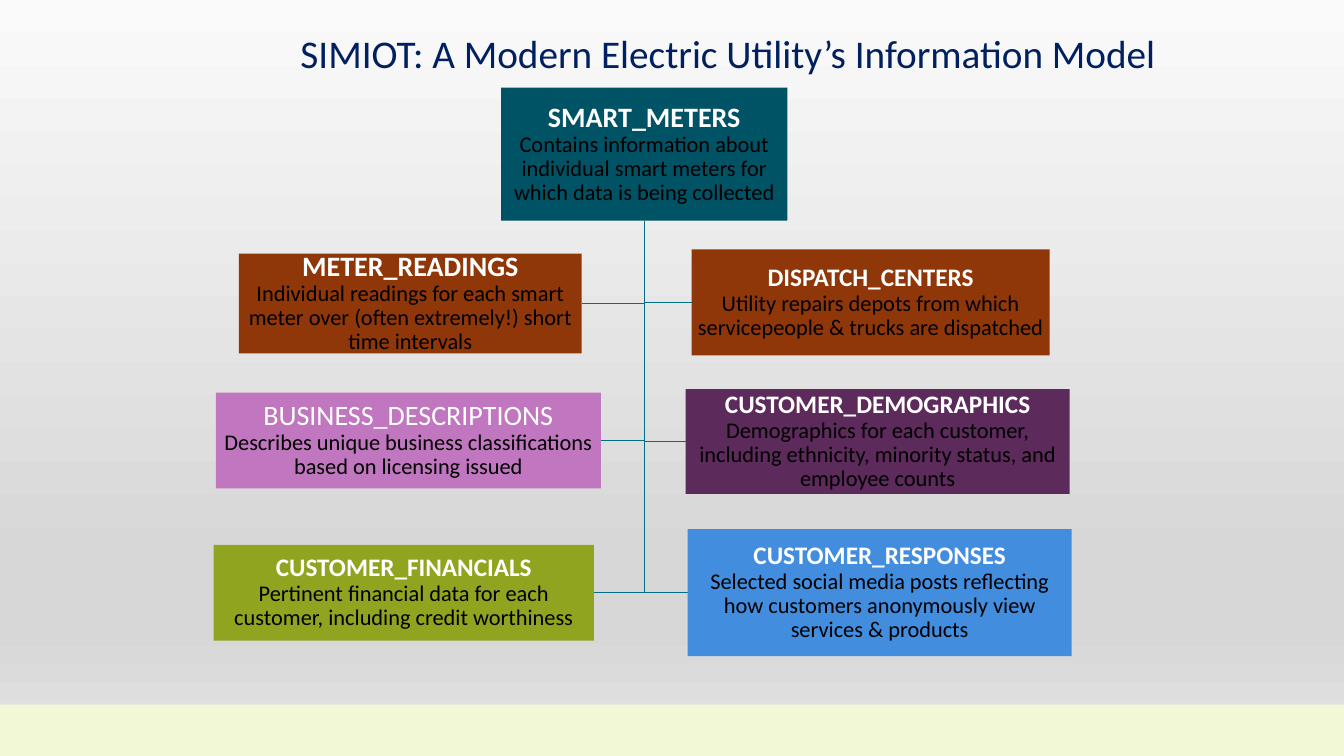
"""Build the SIMIOT information model slide: one parent table with six child tables."""
from lxml.etree import SubElement
from pptx import Presentation
from pptx.dml.color import RGBColor
from pptx.enum.shapes import MSO_SHAPE as Shape
from pptx.enum.text import MSO_ANCHOR as Anchor, MSO_AUTO_SIZE as AutoSize, PP_ALIGN as Align
from pptx.oxml.ns import qn
from pptx.util import Inches, Pt

WIDTH, HEIGHT = 13.33, 7.5
FONT = "Calibri"
COLORS = {
    "title": "002060", "band": "F2F7D6", "line": "006E86", "name": "FFFFFF", "detail": "000000",
    "teal": "005265", "rust": "903709", "orchid": "C177BF", "plum": "5C2A5B",
    "olive": "90A420", "blue": "438DDF",
}
BACKGROUND_STOPS = [(0, "FAFAFA"), (74, "D7D7D7"), (83, "D7D7D7"), (100, "E4E4E4")]

TITLE = "SIMIOT: A Modern Electric Utility’s Information Model"
TITLE_BOX = (2.91, 0.19, 10.34, 0.73)
BAND_TOP = 6.99
TRUNK_X = 6.39
PARENT_TOP = 0.87

PARENT = dict(name="SMART_METERS", size=20, bold=True, color="teal", width=2.84, height=1.32,
              detail="Contains information about individual smart meters for which data is being collected")
LEFT_CHILDREN = [
    dict(name="METER_READINGS", size=20, bold=True, color="rust",
         center=3.01, gap=0.62, width=3.4, height=0.99,
         detail="Individual readings for each smart meter over (often extremely!) short time intervals"),
    dict(name="BUSINESS_DESCRIPTIONS", size=20, bold=False, color="orchid",
         center=4.37, gap=0.43, width=3.82, height=0.95,
         detail="Describes unique business classifications based on licensing issued"),
    dict(name="CUSTOMER_FINANCIALS", size=18, bold=True, color="olive",
         center=5.88, gap=0.5, width=3.77, height=0.95,
         detail="Pertinent financial data for each customer, including credit worthiness"),
]
RIGHT_CHILDREN = [
    dict(name="DISPATCH_CENTERS", size=18, bold=True, color="rust",
         center=3.0, gap=0.47, width=3.55, height=1.05,
         detail="Utility repairs depots from which servicepeople & trucks are dispatched"),
    dict(name="CUSTOMER_DEMOGRAPHICS", size=18, bold=True, color="plum",
         center=4.38, gap=0.41, width=3.81, height=1.04,
         detail="Demographics for each customer, including ethnicity, minority status, and employee counts"),
    dict(name="CUSTOMER_RESPONSES", size=18, bold=True, color="blue",
         center=5.88, gap=0.43, width=3.81, height=1.26,
         detail="Selected social media posts reflecting how customers anonymously view services & products"),
]


def rgb(key):
    return RGBColor.from_string(COLORS[key])


def format_frame(frame, side, edge):
    settings = dict(margin_left=side, margin_right=side, margin_top=edge, margin_bottom=edge)
    for attribute, inches in settings.items():
        setattr(frame, attribute, Inches(inches))
    frame.word_wrap = True
    frame.auto_size = AutoSize.NONE
    frame.vertical_anchor = Anchor.MIDDLE


def add_run(paragraph, text, color, size, bold=False):
    run = paragraph.add_run()
    run.text = text
    for attribute, value in dict(name=FONT, size=Pt(size), bold=bold).items():
        setattr(run.font, attribute, value)
    run.font.color.rgb = rgb(color)


def add_rectangle(slide, left, top, width, height, color):
    box = map(Inches, (left, top, width, height))
    shape = slide.shapes.add_shape(Shape.RECTANGLE, *box)
    shape.shadow.inherit = False
    shape.fill.solid()
    shape.fill.fore_color.rgb = rgb(color)
    shape.line.fill.background()
    return shape


def add_entity(slide, entity, left, top):
    shape = add_rectangle(slide, left, top, entity["width"], entity["height"], entity["color"])
    format_frame(shape.text_frame, 0.01, 0.01)
    paragraph = shape.text_frame.paragraphs[0]
    paragraph.alignment = Align.CENTER
    paragraph.line_spacing = 0.9
    add_run(paragraph, entity["name"], "name", entity["size"], entity["bold"])
    paragraph.add_line_break()
    add_run(paragraph, entity["detail"], "detail", 16)


def add_elbow(slide, start, corner, end):
    start, corner, end = (tuple(map(Inches, point)) for point in (start, corner, end))
    builder = slide.shapes.build_freeform(*start)
    builder.add_line_segments([corner, end], close=False)
    elbow = builder.convert_to_shape()
    elbow.shadow.inherit = False
    elbow.fill.background()
    elbow.line.color.rgb = rgb("line")
    elbow.line.width = Pt(1)


def set_background(slide):
    fill = slide.background.fill
    fill.gradient()
    fill.gradient_angle = 270
    stops = slide._element.find(".//" + qn("a:gsLst"))
    for stop in list(stops):
        stops.remove(stop)
    for percent, color in BACKGROUND_STOPS:
        stop = SubElement(stops, qn("a:gs"), pos=str(percent * 1000))
        SubElement(stop, qn("a:srgbClr"), val=color)


def add_title(slide):
    title = slide.shapes.title
    for attribute, inches in zip(("left", "top", "width", "height"), TITLE_BOX):
        setattr(title, attribute, Inches(inches))
    format_frame(title.text_frame, 0.07, 0.04)
    paragraph = title.text_frame.paragraphs[0]
    paragraph.alignment = Align.LEFT
    paragraph.line_spacing = 0.9
    add_run(paragraph, TITLE, "title", 28)


def add_model(slide):
    trunk_top = (TRUNK_X, PARENT_TOP + PARENT["height"])
    placed = [(PARENT, TRUNK_X - PARENT["width"] / 2, PARENT_TOP)]
    for direction, children in ((-1, LEFT_CHILDREN), (1, RIGHT_CHILDREN)):
        for entity in children:
            center = entity["center"]
            inner_edge = TRUNK_X + direction * entity["gap"]
            add_elbow(slide, trunk_top, (TRUNK_X, center), (inner_edge, center))
            left = inner_edge if direction > 0 else inner_edge - entity["width"]
            placed.append((entity, left, center - entity["height"] / 2))
    for entity, left, top in placed:
        add_entity(slide, entity, left, top)


def main():
    presentation = Presentation()
    presentation.slide_width, presentation.slide_height = Inches(WIDTH), Inches(HEIGHT)
    slide = presentation.slides.add_slide(presentation.slide_layouts[5])
    set_background(slide)
    add_rectangle(slide, 0, BAND_TOP, WIDTH, HEIGHT - BAND_TOP, "band")
    add_title(slide)
    add_model(slide)
    presentation.save("out.pptx")


if __name__ == "__main__":
    main()
